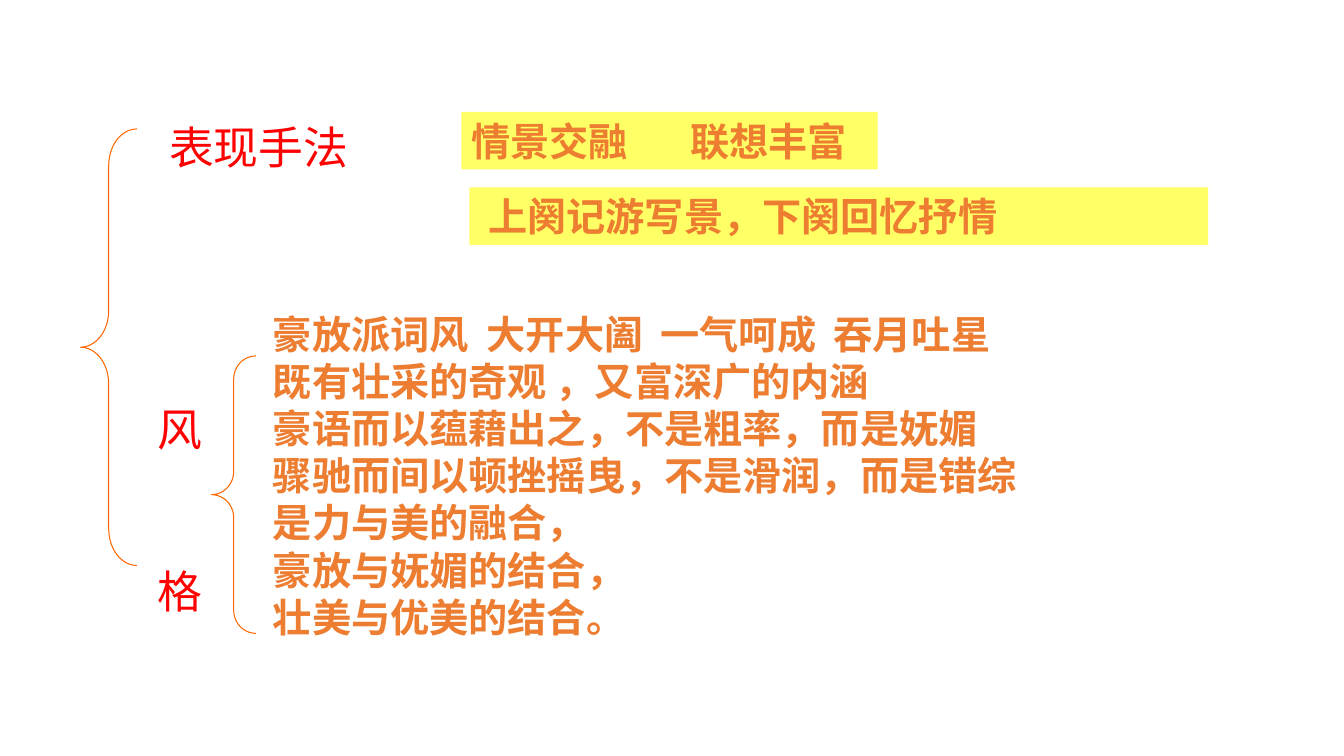
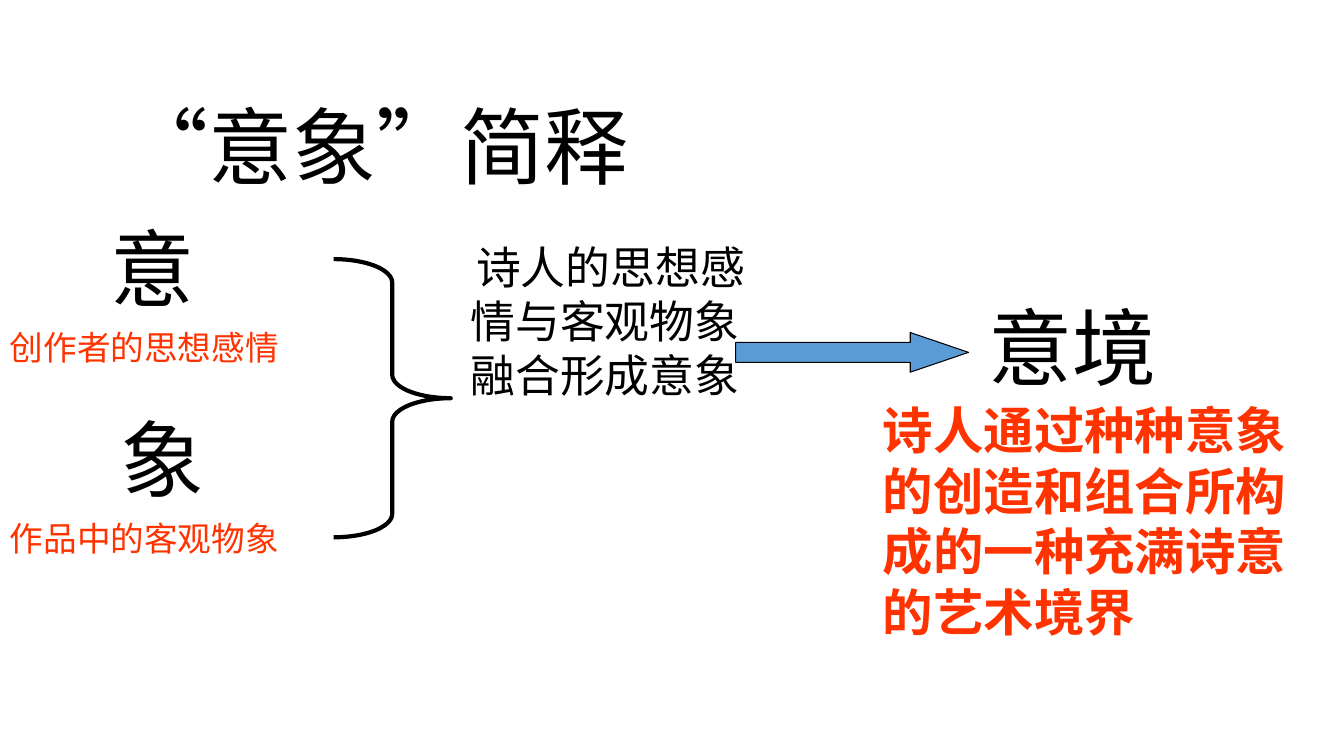
from dataclasses import dataclass

from lxml import etree
from pptx import Presentation
from pptx.dml.color import RGBColor
from pptx.enum.lang import MSO_LANGUAGE_ID
from pptx.enum.shapes import MSO_SHAPE
from pptx.enum.text import MSO_ANCHOR, MSO_AUTO_SIZE, PP_ALIGN
from pptx.oxml.ns import qn
from pptx.util import Cm, Pt

RECTANGLE = MSO_SHAPE.RECTANGLE
LEFT_BRACE = MSO_SHAPE.LEFT_BRACE
RIGHT_BRACE = MSO_SHAPE.RIGHT_BRACE
RIGHT_ARROW = MSO_SHAPE.RIGHT_ARROW
TOP = MSO_ANCHOR.TOP
LEFT = PP_ALIGN.LEFT
FIT_SHAPE = MSO_AUTO_SIZE.SHAPE_TO_FIT_TEXT
CHINESE = MSO_LANGUAGE_ID.SIMPLIFIED_CHINESE


@dataclass(frozen=True)
class Theme:
    font: str = "Noto Sans CJK SC"
    black: str = "000000"
    white: str = "FFFFFF"
    red: str = "FF0000"
    vermilion: str = "FF3300"
    orange: str = "ED7D31"
    brace: str = "FF6600"
    yellow: str = "FFFF66"
    blue: str = "5B9BD5"
    display: int = 60
    definition: int = 36
    label: int = 32
    body: int = 28
    caption: int = 24
    thin: float = 0.75
    thick: float = 3


THEME = Theme()


def color(value):
    return RGBColor.from_string(value)


def format_paragraph(paragraph, size, text_color, bold, indent, tabs):
    properties = paragraph._p.get_or_add_pPr()
    if indent:
        properties.set("indent", str(Cm(indent)))
    if tabs:
        tab_list = etree.SubElement(properties, qn("a:tabLst"))
        for position in tabs:
            etree.SubElement(tab_list, qn("a:tab"), pos=str(Cm(position)), algn="l")
    paragraph.alignment = LEFT
    for run in paragraph.runs:
        font = run.font
        font.name = THEME.font
        font.size = Pt(size)
        font.bold = bold
        font.color.rgb = color(text_color)
        font.language_id = CHINESE
        east_asian = etree.SubElement(run._r.get_or_add_rPr(), qn("a:ea"))
        east_asian.set("typeface", THEME.font)


def add_figure(slide, kind, box, fill=None, line=None, width=THEME.thin, adjustments=()):
    shape = slide.shapes.add_shape(kind, *map(Cm, box))
    shape.shadow.inherit = False
    if fill:
        shape.fill.solid()
        shape.fill.fore_color.rgb = color(fill)
    else:
        shape.fill.background()
    if line:
        shape.line.color.rgb = color(line)
        shape.line.width = Pt(width)
    else:
        shape.line.fill.background()
    for index, value in enumerate(adjustments):
        shape.adjustments[index] = value
    return shape


def add_words(slide, box, words, size, text_color, bold=False, fill=None,
              indent=0, tabs=(), gap=0):
    if fill:
        shape = add_figure(slide, RECTANGLE, box, fill)
    else:
        shape = slide.shapes.add_textbox(*map(Cm, box))
    frame = shape.text_frame
    frame.word_wrap = True
    frame.auto_size = FIT_SHAPE
    frame.vertical_anchor = TOP
    frame.text = words
    for index, paragraph in enumerate(frame.paragraphs):
        format_paragraph(paragraph, size, text_color, bold, indent, tabs)
        if index and gap:
            paragraph.space_before = Pt(gap)


def add_techniques(slide, left, top):
    add_words(slide, (left, top, 5.03, 1.6), "表现手法", THEME.label, THEME.red)
    highlight = dict(size=THEME.body, text_color=THEME.orange, bold=True, fill=THEME.yellow)
    add_words(slide, (left + 7.62, top - 0.08, 10.49, 1.45),
              "情景交融\t联想丰富", tabs=(5.52,), **highlight)
    add_words(slide, (left + 7.82, top + 1.82, 18.62, 1.45),
              "上阕记游写景，下阕回忆抒情", indent=0.23, **highlight)


def add_style(slide, left, top):
    lines = (
        "豪放派词风\t大开大阖\t一气呵成\t吞月吐星",
        "既有壮采的奇观 ，又富深广的内涵",
        "豪语而以蕴藉出之，不是粗率，而是妩媚",
        "骤驰而间以顿挫摇曳，不是滑润，而是错综",
        "是力与美的融合，",
        "豪放与妩媚的结合，",
        "壮美与优美的结合。",
    )
    add_words(slide, (left, top + 2.31, 2.95, 5.66), "风\n格",
              THEME.label, THEME.red, gap=2.4 * THEME.label)
    add_words(slide, (left + 2.9, top, 20.85, 8.56), "\n".join(lines),
              THEME.body, THEME.orange, bold=True, fill=THEME.white,
              tabs=[5.39 + 4.37 * step for step in range(3)])
    add_figure(slide, LEFT_BRACE, (left + 1.6, top + 1.27, 1.12, 6.99),
               line=THEME.brace, adjustments=(0.52, 0.5))


def build_analysis(slide):
    add_figure(slide, LEFT_BRACE, (2.03, 3.25, 1.42, 11),
               line=THEME.brace, adjustments=(0.65, 0.5))
    add_techniques(slide, 4.01, 2.9)
    add_style(slide, 3.73, 7.7)


def add_term(slide, left, top, term, caption, offset):
    add_words(slide, (left + offset, top, 4, 2.79), term, THEME.display, THEME.black)
    add_words(slide, (left, top + 2.79, 10, 1.27), caption, THEME.caption, THEME.vermilion)


def add_fusion(slide, left, top):
    add_figure(slide, RIGHT_BRACE, (left, top + 0.61, 2.95, 7.01),
               line=THEME.black, width=THEME.thick, adjustments=(0.2, 0.5))
    add_words(slide, (left + 3.2, top, 7.5, 5.66),
              "诗人的思想感情与客观物象融合形成意象", THEME.label, THEME.black, indent=0.14)
    add_figure(slide, RIGHT_ARROW, (left + 10.13, top + 2.46, 5.87, 1),
               THEME.blue, THEME.black, adjustments=(0.5, 1.47))


def add_realm(slide, left, top):
    add_words(slide, (left + 2.67, top, 7.75, 2.79), "意境", THEME.display, THEME.black)
    add_words(slide, (left, top + 2.62, 11.86, 6.35),
              "诗人通过种种意象的创造和组合所构成的一种充满诗意的艺术境界",
              THEME.definition, THEME.vermilion, bold=True)


def build_imagery(slide):
    add_words(slide, (2.9, 2.26, 17.6, 2.79), "“意象”简释", THEME.display, THEME.black)
    add_term(slide, 0, 5.33, "意", "创作者的思想感情", 2.54)
    add_term(slide, 0, 10.14, "象", "作品中的客观物象", 2.79)
    add_fusion(slide, 8.41, 5.92)
    add_realm(slide, 22, 7.32)


def main():
    presentation = Presentation()
    presentation.slide_width = Cm(33.87)
    presentation.slide_height = Cm(19.05)
    blank = presentation.slide_layouts[6]
    for build in (build_analysis, build_imagery):
        build(presentation.slides.add_slide(blank))
    presentation.save("out.pptx")


if __name__ == "__main__":
    main()
